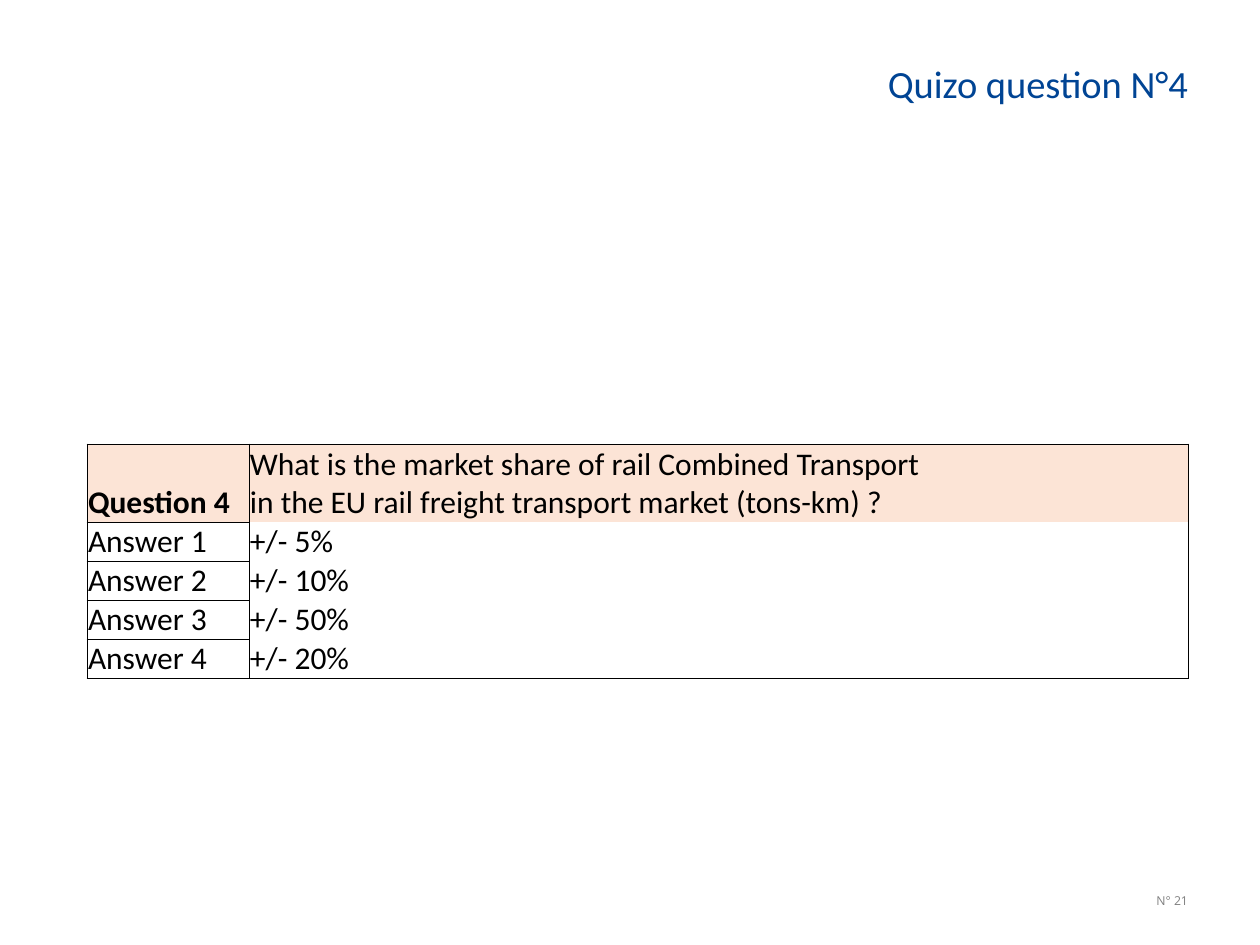
from lxml.etree import SubElement
from pptx import Presentation
from pptx.dml.color import RGBColor
from pptx.enum.text import MSO_ANCHOR, PP_ALIGN
from pptx.oxml.ns import qn
from pptx.util import Pt

PX = 914400 // 126  # EMU per px
BLUE = RGBColor(0x00, 0x44, 0x94)
GRAY = RGBColor(0x80, 0x80, 0x80)
BLACK = RGBColor(0x00, 0x00, 0x00)
PEACH = RGBColor(0xFC, 0xE4, 0xD6)
WHITE = RGBColor(0xFF, 0xFF, 0xFF)

# Content: text, box in px, font, size, colour
TEXTS = [
    ("Quizo question N°4", (181, 29, 1007, 77), "Calibri", 22, BLUE),
    ("N° 21", (1048, 888, 140, 20), "Open Sans", 7, GRAY),
]
ROWS = [
    ("Question 4", "What is the market share of rail Combined Transport "
                   "in the EU rail freight transport market (tons-km) ?"),
    ("Answer 1", "+/- 5%"),
    ("Answer 2", "+/- 10%"),
    ("Answer 3", "+/- 50%"),
    ("Answer 4", "+/- 20%"),
]
TABLE_LEFT, TABLE_TOP = 87, 444
COLUMN_WIDTHS = [162, 683, 107, 150]
QUESTION_HEIGHT, ANSWER_HEIGHT = 78, 39


def px(*lengths):
    return [length * PX for length in lengths]


def style_font(font, name, size, color, bold=False):
    font.name, font.size, font.bold = name, Pt(size), bold
    font.color.rgb = color


def add_text(slide, text, box, font_name, size, color):
    frame = slide.shapes.add_textbox(*px(*box)).text_frame
    frame.word_wrap = True
    frame.vertical_anchor = MSO_ANCHOR.BOTTOM
    frame.margin_left = frame.margin_right = 0
    frame.margin_top = frame.margin_bottom = 0
    frame.text = text
    paragraph = frame.paragraphs[0]
    paragraph.alignment = PP_ALIGN.RIGHT
    style_font(paragraph.runs[0].font, font_name, size, color)


def set_borders(cell, visible):
    """Draw the sides named in visible and clear the others."""
    properties = cell._tc.get_or_add_tcPr()
    for side in "LRTB":
        line = SubElement(properties, qn(f"a:ln{side}"), w=str(Pt(0.5)))
        if side in visible:
            fill = SubElement(line, qn("a:solidFill"))
            SubElement(fill, qn("a:srgbClr"), val=str(BLACK))
        else:
            SubElement(line, qn("a:noFill"))


def sides(row, column, last_row, last_column):
    if column == 0:
        return "LRTB"
    rules = [("L", column == 1), ("R", column == last_column),
             ("T", row == 0), ("B", row == last_row)]
    return "".join(side for side, shown in rules if shown)


def add_question_table(slide):
    heights = [QUESTION_HEIGHT] + [ANSWER_HEIGHT] * (len(ROWS) - 1)
    box = px(TABLE_LEFT, TABLE_TOP, sum(COLUMN_WIDTHS), sum(heights))
    table = slide.shapes.add_table(len(ROWS), len(COLUMN_WIDTHS), *box).table
    table.first_row = table.horz_banding = False
    for column, width in zip(table.columns, COLUMN_WIDTHS):
        column.width = width * PX
    for row, height in zip(table.rows, heights):
        row.height = height * PX

    last_row, last_column = len(ROWS) - 1, len(COLUMN_WIDTHS) - 1
    for r, texts in enumerate(ROWS):
        for c in range(len(COLUMN_WIDTHS)):
            cell = table.cell(r, c)
            # Merged answers carry the outer right edge on their first cell
            edge = 1 if r > 0 else last_column
            set_borders(cell, sides(r, c, last_row, edge))
            cell.fill.solid()
            cell.fill.fore_color.rgb = PEACH if r == 0 else WHITE
            cell.margin_left = cell.margin_right = cell.margin_top = PX
            cell.margin_bottom = 0
            cell.vertical_anchor = MSO_ANCHOR.BOTTOM
            if c < len(texts):
                cell.text = texts[c]
                font = cell.text_frame.paragraphs[0].runs[0].font
                style_font(font, "Calibri", 18, BLACK, bold=r == c == 0)
        if r > 0:
            table.cell(r, 1).merge(table.cell(r, last_column))


def main():
    presentation = Presentation()
    presentation.slide_width, presentation.slide_height = px(1260, 945)
    slide = presentation.slides.add_slide(presentation.slide_layouts[6])
    # Title and slide number
    for item in TEXTS:
        add_text(slide, *item)
    # Question and its answers
    add_question_table(slide)
    presentation.save("out.pptx")


if __name__ == "__main__":
    main()
